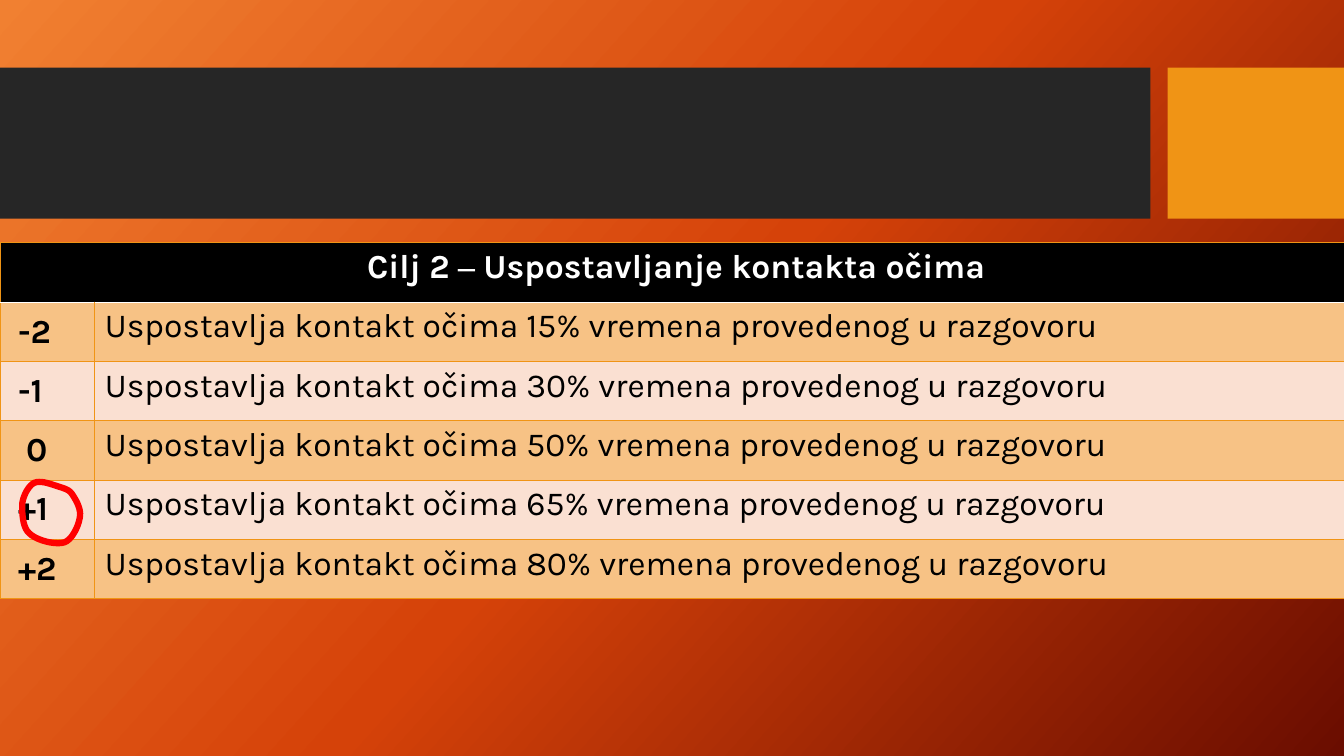
from copy import deepcopy
from dataclasses import dataclass

from lxml.etree import SubElement
from pptx import Presentation
from pptx.dml.color import RGBColor
from pptx.enum.shapes import MSO_SHAPE as Preset
from pptx.enum.text import MSO_ANCHOR as Anchor, PP_ALIGN as Align
from pptx.oxml.ns import qn
from pptx.slide import Slide
from pptx.table import _Cell as Cell
from pptx.text.text import _Paragraph as Paragraph
from pptx.util import Inches, Pt

Point = tuple[float, float]

ORANGE = "F09415"
BLACK = "000000"
WHITE = "FFFFFF"
BAND_FILLS = ("F7C285", "FAE0D2")
BODY_FONT = "Karla"
CELL_MARGIN = 0.1
SPACE_WIDTH = 0.08


@dataclass
class Block:
    left: float
    width: float
    fill: str


@dataclass
class Level:
    score: str
    percent: int
    indent: float = SPACE_WIDTH


BLOCKS = [Block(0, 11.41, "262626"), Block(11.58, 1.75, ORANGE)]
LEVELS = [
    Level("-2", 15),
    Level("-1", 30),
    Level("0", 50, 2 * SPACE_WIDTH),
    Level("+1", 65),
    Level("+2", 80),
]
BACKGROUND_STOPS = [(0, "F18031"), (0.5, "D54209"), (1, "6A0D00")]
CIRCLE_START = (0.72, 4.91)
CIRCLE_CURVES = [
    ((0.69, 4.86), (0.65, 4.85), (0.59, 4.83)),
    ((0.52, 4.81), (0.41, 4.76), (0.34, 4.79)),
    ((0.28, 4.82), (0.23, 4.92), (0.22, 5.0)),
    ((0.22, 5.08), (0.22, 5.23), (0.29, 5.29)),
    ((0.36, 5.36), (0.55, 5.41), (0.64, 5.38)),
    ((0.72, 5.35), (0.78, 5.21), (0.79, 5.14)),
    ((0.81, 5.06), (0.76, 4.97), CIRCLE_START),
]


def color(value: str) -> RGBColor:
    return RGBColor.from_string(value)


def paint_background(slide: Slide) -> None:
    fill = slide.background.fill
    fill.gradient()
    fill.gradient_angle = 360 - 42
    stop_list = slide.element.find(".//" + qn("a:gsLst"))
    stop_list.append(deepcopy(stop_list[0]))
    for stop, (position, value) in zip(fill.gradient_stops, BACKGROUND_STOPS):
        stop.position = position
        stop.color.rgb = color(value)


def add_block(slide: Slide, block: Block) -> None:
    shape = slide.shapes.add_shape(
        Preset.RECTANGLE, Inches(block.left), Inches(0.67), Inches(block.width), Inches(1.5)
    )
    shape.shadow.inherit = False
    shape.fill.solid()
    shape.fill.fore_color.rgb = color(block.fill)
    shape.line.fill.background()


def add_run(paragraph: Paragraph, text: str, ink: str, bold: bool, font: str = BODY_FONT) -> None:
    run = paragraph.add_run()
    run.text = text
    run.font.name = font
    run.font.size = Pt(24)
    run.font.bold = bold
    run.font.color.rgb = color(ink)


def style_cell(cell: Cell, fill: str, top: str = ORANGE, bottom: str = ORANGE) -> None:
    """Give the cell its four borders and its fill."""
    properties = cell._tc.get_or_add_tcPr()
    for side, value in zip("LRTB", (ORANGE, ORANGE, top, bottom)):
        width = Pt(1) if value == WHITE else Pt(0.75)
        line = SubElement(properties, qn(f"a:ln{side}"), w=str(width))
        SubElement(SubElement(line, qn("a:solidFill")), qn("a:srgbClr"), val=value)
    cell.fill.solid()
    cell.fill.fore_color.rgb = color(fill)


def add_goal_table(slide: Slide) -> None:
    table = slide.shapes.add_table(
        len(LEVELS) + 1, 2, Inches(0), Inches(2.41), Inches(13.33), Inches(3.53)
    ).table
    table.horz_banding = False
    for column, width in zip(table.columns, (0.94, 12.39)):
        column.width = Inches(width)

    header = table.cell(0, 0)
    header.merge(table.cell(0, 1))
    for cell in table.rows[0].cells:
        style_cell(cell, BLACK, bottom=WHITE)
    header.margin_left = Inches(CELL_MARGIN + SPACE_WIDTH)
    title = header.text_frame.paragraphs[0]
    title.alignment = Align.CENTER
    add_run(title, "Cilj 2 ", WHITE, True)
    add_run(title, "– ", WHITE, True, "Times New Roman")
    add_run(title, "Uspostavljanje kontakta očima", WHITE, True)

    for row, level in enumerate(LEVELS, start=1):
        score, description = table.cell(row, 0), table.cell(row, 1)
        for cell in (score, description):
            style_cell(cell, BAND_FILLS[(row - 1) % 2], top=WHITE if row == 1 else ORANGE)
        score.vertical_anchor = Anchor.MIDDLE
        score.margin_left = Inches(CELL_MARGIN + level.indent)
        add_run(score.text_frame.paragraphs[0], level.score, BLACK, True)
        sentence = f"Uspostavlja kontakt očima {level.percent}% vremena provedenog u razgovoru"
        add_run(description.text_frame.paragraphs[0], sentence, BLACK, False)


def curve_points(start: Point, curve: tuple[Point, Point, Point], steps: int = 10) -> list[Point]:
    """Points along a cubic Bézier curve, without its start."""
    points = []
    for step in range(1, steps + 1):
        t = step / steps
        weights = ((1 - t) ** 3, 3 * t * (1 - t) ** 2, 3 * t**2 * (1 - t), t**3)
        x, y = (
            sum(weight * value for weight, value in zip(weights, axis))
            for axis in zip(start, *curve)
        )
        points.append((x, y))
    return points


def add_score_circle(slide: Slide) -> None:
    outline = [CIRCLE_START]
    for curve in CIRCLE_CURVES:
        outline += curve_points(outline[-1], curve)
    vertices = [(Inches(x), Inches(y)) for x, y in outline]
    builder = slide.shapes.build_freeform(*vertices[0])
    builder.add_line_segments(vertices[1:], close=True)
    circle = builder.convert_to_shape()
    circle.shadow.inherit = False
    circle.fill.background()
    circle.line.color.rgb = color("FF0000")
    circle.line.width = Pt(4.5)


def main() -> None:
    presentation = Presentation()
    presentation.slide_width = Inches(13.33)
    presentation.slide_height = Inches(7.5)
    slide = presentation.slides.add_slide(presentation.slide_layouts[6])
    paint_background(slide)
    for block in BLOCKS:
        add_block(slide, block)
    add_goal_table(slide)
    add_score_circle(slide)
    presentation.save("out.pptx")


if __name__ == "__main__":
    main()
